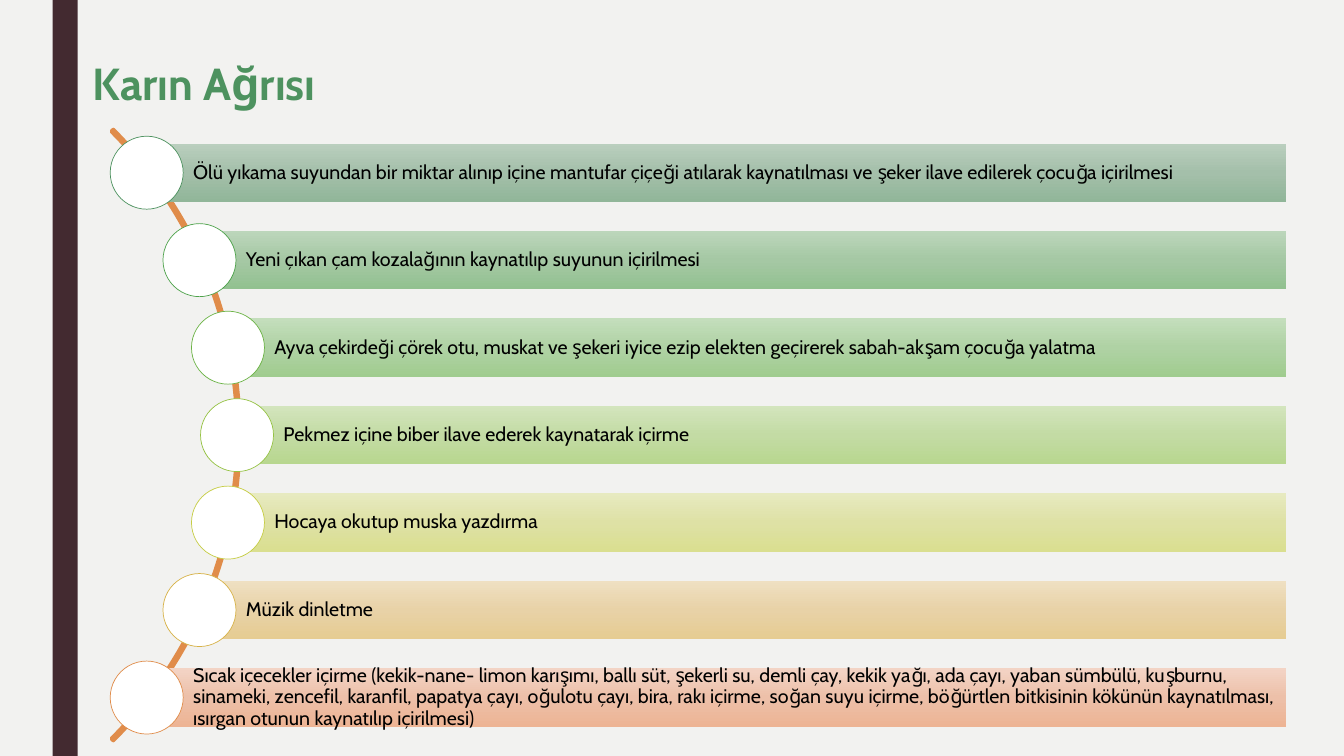
from copy import deepcopy
from math import sqrt

from pptx import Presentation
from pptx.dml.color import RGBColor
from pptx.enum import shapes, text
from pptx.util import Pt

FONT = "Cabin"
ORANGE = "E08C4A"

# remedy, circle outline, gradient from top to bottom of the bar
REMEDIES = [
    ("Ölü yıkama suyundan bir miktar alınıp içine mantufar çiçeği atılarak "
     "kaynatılması ve şeker ilave edilerek çocuğa içirilmesi",
     "4D925F", ("BACFBE", "A4BFAA", "91B699")),
    ("Yeni çıkan çam kozalağının kaynatılıp suyunun içirilmesi",
     "4DA24A", ("BCD6BB", "A5C8A4", "92C190")),
    ("Ayva çekirdeği çörek otu, muskat ve şekeri iyice ezip elekten "
     "geçirerek sabah-akşam çocuğa yalatma",
     "6BB345", ("C4DEBC", "AFD2A4", "A0CC8F")),
    ("Pekmez içine biber ilave ederek kaynatarak içirme",
     "95C243", ("D3E5BD", "C3DBA4", "B8D78F")),
    ("Hocaya okutup muska yazdırma",
     "C6CD44", ("E7EAC0", "DEE1A5", "DADF90")),
    ("Müzik dinletme",
     "D7B247", ("EFE0C2", "E8D2A7", "E6CC92")),
    ("Sıcak içecekler içirme (kekik-nane- limon karışımı, ballı süt, şekerli "
     "su, demli çay, kekik yağı, ada çayı, yaban sümbülü, kuşburnu, sinameki, "
     "zencefil, karanfil, papatya çayı, oğulotu çayı, bira, rakı içirme, soğan "
     "suyu içirme, böğürtlen bitkisinin kökünün kaynatılması, ısırgan otunun "
     "kaynatılıp içirilmesi)",
     ORANGE, ("F3D4C5", "EDC0A9", "EDB494")),
]


def color(value):
    return RGBColor.from_string(value)


def set_all(target, values):
    for name, value in values.items():
        setattr(target, name, value)


def add_plain(slide, kind, box, fill=None, line=None, width=0.5):
    shape = slide.shapes.add_shape(kind, *map(Pt, box))
    shape.shadow.inherit = False
    if fill:
        shape.fill.solid()
        shape.fill.fore_color.rgb = color(fill)
    else:
        shape.fill.background()
    if line:
        shape.line.color.rgb = color(line)
        shape.line.width = Pt(width)
    else:
        shape.line.fill.background()
    return shape


def fill_gradient(shape, tones):
    """Fill from top to bottom with three evenly spaced tones."""
    shape.fill.gradient()
    shape.fill.gradient_angle = 270
    stop_list = shape.element.spPr.xpath(".//a:gsLst")[0]
    stop_list.insert(1, deepcopy(stop_list[0]))
    for i, (stop, tone) in enumerate(zip(shape.fill.gradient_stops, tones)):
        stop.position = i / 2
        stop.color.rgb = color(tone)


def write(frame, words, size, tone, bold=False, **paragraph_format):
    paragraph = frame.paragraphs[0]
    set_all(paragraph, {"alignment": text.PP_ALIGN.LEFT, **paragraph_format})
    run = paragraph.add_run()
    run.text = words
    set_all(run.font, {"name": FONT, "size": Pt(size), "bold": bold})
    run.font.color.rgb = color(tone)


def add_title(slide, box, words):
    frame = slide.shapes.add_textbox(*map(Pt, box)).text_frame
    frame.word_wrap = True
    write(frame, words, 32, "4D925F", bold=True)


def add_remedy(slide, box, words, outline, tones):
    """A bar with its circle centred on the bar's left edge."""
    left, top, width, height = box
    bar = add_plain(slide, shapes.MSO_SHAPE.RECTANGLE, box)
    fill_gradient(bar, tones)
    set_all(bar.text_frame, {
        "word_wrap": True,
        "vertical_anchor": text.MSO_ANCHOR.MIDDLE,
        "margin_left": Pt(33.2),
        "margin_right": Pt(2.9),
        "margin_top": Pt(2.9),
        "margin_bottom": Pt(2.9),
    })
    write(bar.text_frame, words, 14, "000000",
          line_spacing=0.9, space_after=Pt(4.9))
    size = 1.25 * height
    circle = (left - size / 2, top + (height - size) / 2, size, size)
    add_plain(slide, shapes.MSO_SHAPE.OVAL, circle, "FFFFFF", outline)


def add_curved_list(slide, box, remedies):
    """Bars stacked in the box, each starting on an arc that bulges right."""
    left, top, width, height = box
    bar_height, radius, bulge = 41.7, 304.6, 64.9
    pitch = (height - bar_height) / (len(remedies) - 1)
    middle = top + height / 2

    arc_radius = 308.5
    arc_box = (-137.2 - arc_radius, middle - arc_radius,
               2 * arc_radius, 2 * arc_radius)
    arc = add_plain(slide, shapes.MSO_SHAPE.BLOCK_ARC, arc_box,
                    line=ORANGE, width=2.75)
    for i, value in enumerate((189, 27, 0.003)):
        arc.adjustments[i] = value

    for row, remedy in enumerate(remedies):
        bar_top = top + row * pitch
        offset = bar_top + bar_height / 2 - middle
        indent = bulge - radius + sqrt(radius ** 2 - offset ** 2)
        bar = (left + indent, bar_top, width - indent, bar_height)
        add_remedy(slide, bar, *remedy)


def main():
    deck = Presentation()
    deck.slide_width, deck.slide_height = Pt(960), Pt(540)
    slide = deck.slides.add_slide(deck.slide_layouts[6])
    slide.background.fill.solid()
    slide.background.fill.fore_color.rgb = color("F2F2F0")
    add_plain(slide, shapes.MSO_SHAPE.RECTANGLE, (37.5, 0, 18, 540), "432A30")
    add_curved_list(slide, (104.4, 102.5, 814.2, 416.6), REMEDIES)
    add_title(slide, (59, 36, 371.5, 46), "Karın Ağrısı")
    deck.save("out.pptx")


if __name__ == "__main__":
    main()
